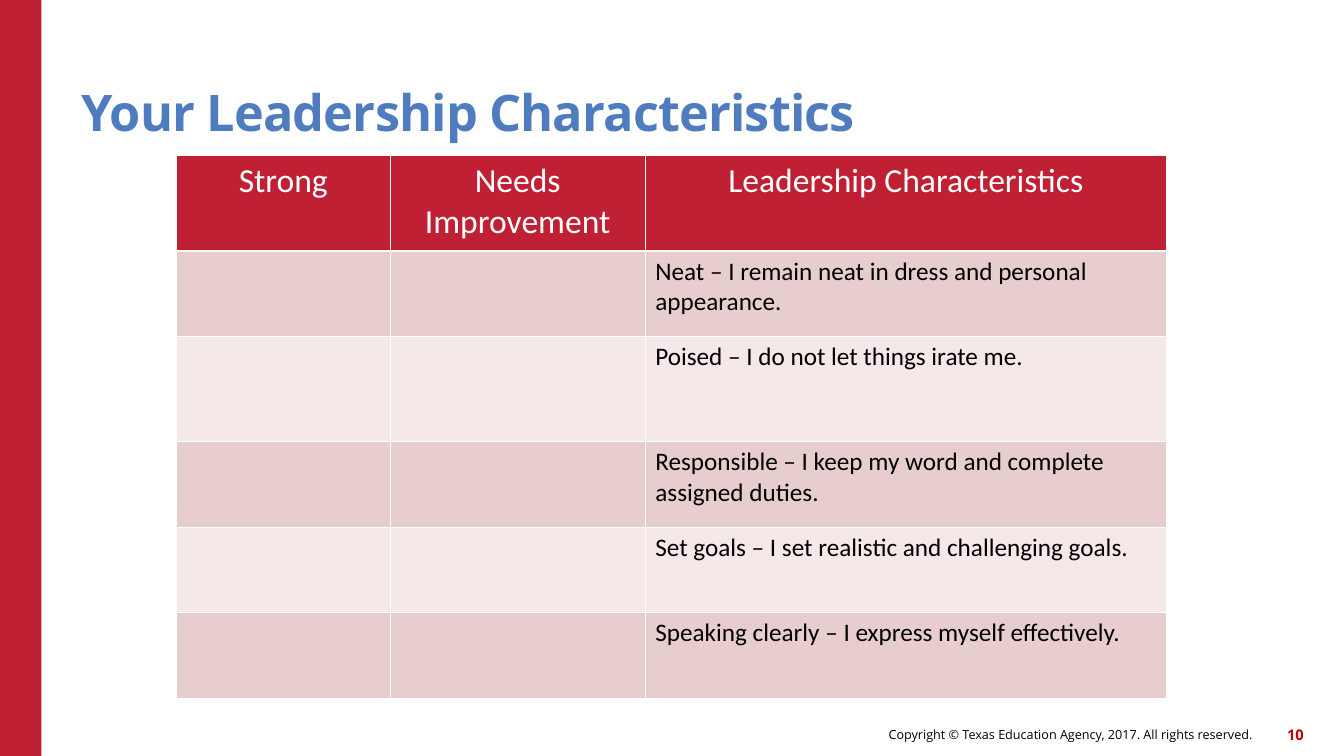
from lxml import etree
from pptx import Presentation
from pptx import util as u
from pptx.dml.color import RGBColor
from pptx.enum import shapes, text
from pptx.oxml.ns import qn

WIDTH, HEIGHT = 13.33, 7.5
RED, WHITE, BLACK = "C02033", "FFFFFF", "000000"
BANDS = ("E8CDCE", "F4E8E8")
COLUMNS = (2.12, 2.53, 5.17)
ROWS = (0.95, 0.85, 1.04, 0.85, 0.85, 0.85)
HEADINGS = (("Strong",), ("Needs", "Improvement"), ("Leadership Characteristics",))
TRAITS = (
    "Neat – I remain neat in dress and personal appearance.",
    "Poised – I do not let things irate me.",
    "Responsible – I keep my word and complete assigned duties.",
    "Set goals – I set realistic and challenging goals.",
    "Speaking clearly – I express myself effectively.",
)


def colour(value):
    """Turn a hex string into a colour."""
    return RGBColor.from_string(value)


def style(para, face, size, shade, bold=False):
    """Format every run of a paragraph."""
    for span in para.runs:
        span.font.name = face
        span.font.size = u.Pt(size)
        span.font.bold = bold
        span.font.color.rgb = colour(shade)


def add_text(page, box, words, size, shade, bold, align, anchor):
    """Place one line of text without margins and return its paragraph."""
    frame = page.shapes.add_textbox(*map(u.Inches, box)).text_frame
    frame.margin_left = frame.margin_right = frame.margin_top = frame.margin_bottom = 0
    frame.word_wrap = True
    frame.vertical_anchor = anchor
    para = frame.paragraphs[0]
    para.text = words
    para.alignment = align
    style(para, "Open Sans", size, shade, bold)
    return para


def add_side_band(page, box):
    """Draw the red band down the side of the page."""
    band = page.shapes.add_shape(shapes.MSO_SHAPE.RECTANGLE, *map(u.Inches, box))
    band.shadow.inherit = False
    band.fill.solid()
    band.fill.fore_color.rgb = colour(RED)
    band.line.fill.background()


def add_title(page, box):
    """Place the slide title."""
    para = add_text(page, box, "Your Leadership Characteristics", 36, "4E7CBE", True,
                    text.PP_ALIGN.LEFT, text.MSO_ANCHOR.BOTTOM)
    para.line_spacing = 0.9
    para.runs[0].font._element.set("spc", "-60")


def add_footer(page, box):
    """Place the copyright line and the page number at the ends of the box."""
    left, top, width, height = box
    number = 0.42
    notice = width - number - 0.09
    parts = (
        (left, notice, "Copyright © Texas Education Agency, 2017. All rights reserved.", 9, BLACK, False),
        (left + width - number, number, "10", 10.5, "C00000", True),
    )
    for start, span, words, size, shade, bold in parts:
        add_text(page, (start, top, span, height), words, size, shade, bold,
                 text.PP_ALIGN.RIGHT, text.MSO_ANCHOR.MIDDLE)


def paint_cell(cell, shade):
    """Give a cell white borders and a plain fill."""
    properties = cell._tc.get_or_add_tcPr()
    for side in ("a:lnL", "a:lnR", "a:lnT", "a:lnB"):
        line = etree.SubElement(properties, qn(side), w=str(u.Pt(1)))
        fill = etree.SubElement(line, qn("a:solidFill"))
        etree.SubElement(fill, qn("a:srgbClr"), val=WHITE)
    cell.fill.solid()
    cell.fill.fore_color.rgb = colour(shade)


def add_checklist(page, box):
    """Build the table of characteristics, sharing the box among its columns and rows."""
    left, top, width, height = box
    table = page.shapes.add_table(len(ROWS), len(COLUMNS), *map(u.Inches, box)).table
    for column, share in zip(table.columns, COLUMNS):
        column.width = u.Inches(width * share / sum(COLUMNS))
    for row, share in zip(table.rows, ROWS):
        row.height = u.Inches(height * share / sum(ROWS))
    for index, row in enumerate(table.rows):
        for cell in row.cells:
            paint_cell(cell, BANDS[(index - 1) % 2] if index else RED)
    for cell, lines in zip(table.rows[0].cells, HEADINGS):
        cell.text_frame.text = "\n".join(lines)
        for para in cell.text_frame.paragraphs:
            para.alignment = text.PP_ALIGN.CENTER
            style(para, "Calibri", 24, WHITE)
    for index, trait in enumerate(TRAITS, 1):
        frame = table.cell(index, len(COLUMNS) - 1).text_frame
        frame.text = trait
        style(frame.paragraphs[0], "Calibri", 18, BLACK)


def main():
    """Build the deck and save it."""
    deck = Presentation()
    deck.slide_width, deck.slide_height = u.Inches(WIDTH), u.Inches(HEIGHT)
    page = deck.slides.add_slide(deck.slide_layouts[6])
    add_side_band(page, (0, 0, 0.41, HEIGHT))
    add_footer(page, (6.14, 7.13, 6.79, 0.32))
    add_title(page, (0.81, 0.45, 11, 0.96))
    add_checklist(page, (1.75, 1.54, sum(COLUMNS), sum(ROWS)))
    deck.save("out.pptx")


if __name__ == "__main__":
    main()
